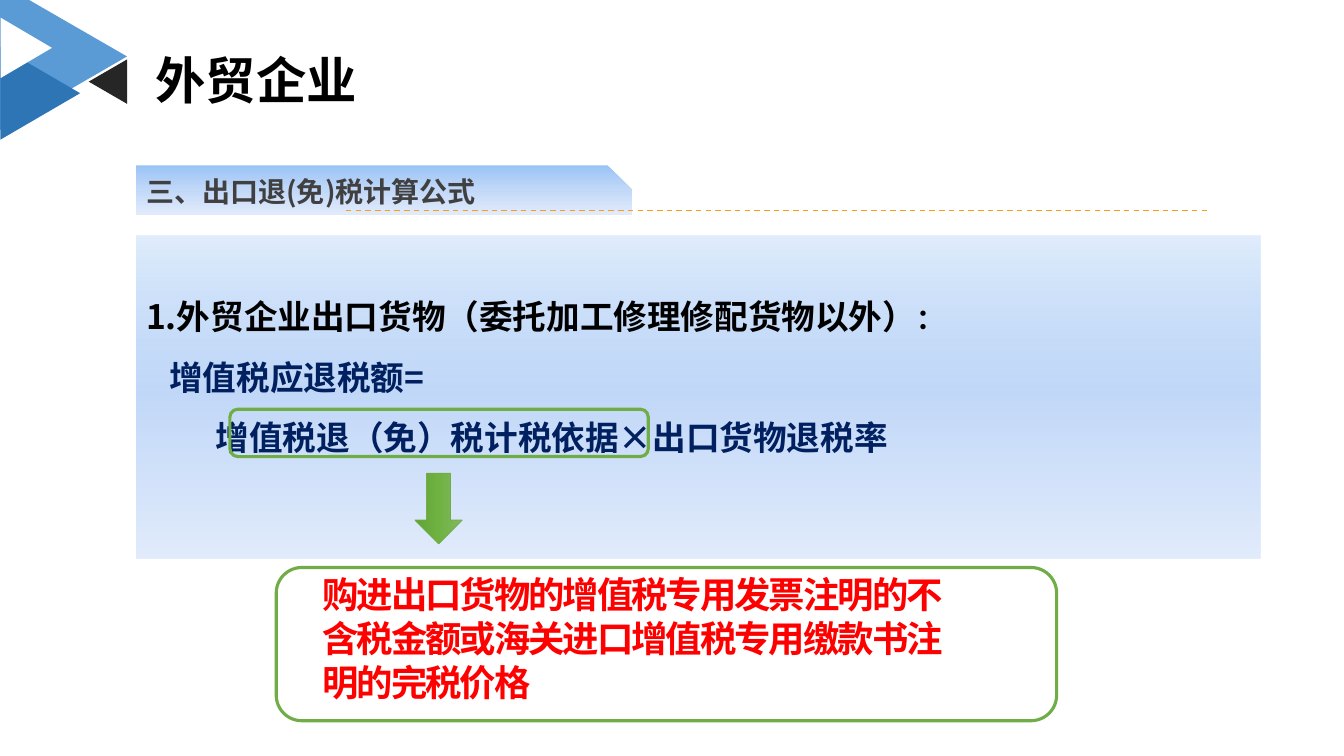
from dataclasses import dataclass

from lxml import etree
from pptx import Presentation
from pptx import util as u
from pptx.dml.color import RGBColor
from pptx.enum import dml, shapes, text
from pptx.oxml import ns

PX = 9144  # 100 px to the inch


@dataclass(frozen=True)
class Theme:
    font: str = "Noto Sans CJK SC"
    black: str = "000000"
    grey: str = "404040"
    navy: str = "002060"
    red: str = "FF0000"
    green: str = "70AD47"
    orange: str = "F89E1B"
    title_size: int = 36
    callout_size: int = 26
    formula_size: int = 24
    heading_size: int = 20
    # (position %, colour, opacity %)
    band: tuple = ((0, "9AC3F5", 100), (50, "C2D8F8", 100), (100, "E1EBFB", 100))
    panel: tuple = ((0, "9AC3F5", 30), (50, "C2D8F8", 100), (100, "E1EBFB", 100))
    leaf: tuple = ((0, "81B861", 100), (50, "6FB242", 100), (100, "62A336", 100))


T = Theme()
SHAPE = shapes.MSO_SHAPE

TITLE = "外贸企业"
HEADING = "三、出口退(免)税计算公式"
CALLOUT = "购进出口货物的增值税专用发票注明的不含税金额或海关进口增值税专用缴款书注明的完税价格"
# (indent, [(words, size, colour), ...])
FORMULA = [
    (0, [("1.外贸企业出口货物（委托加工修理修配货物以外）", T.formula_size, T.black),
         ("：", T.heading_size, T.black)]),
    (23, [("增值税应退税额=", T.formula_size, T.navy)]),
    (69, [("增值税退（免）税计税依据×出口货物退税率", T.formula_size, T.navy)]),
]
CORNER_BAND = ("5B9BD5", [(0, 0), (29, 0), (126, 56), (0, 129)])
# (frame before rotation, rotation, colour)
CORNER_TRIANGLES = [
    ((-6, 53, 92, 79), 90, "2E75B6"),
    ((85, 62, 44, 38), 270, "262626"),
    ((-4, 22, 60, 51), 90, "FFFFFF"),
]
OUTLINES = {"tax basis": (228, 406, 415, 47), "callout": (274, 563, 774, 152)}


def emu(frame):
    return [u.Emu(length * PX) for length in frame]


def rgb(colour):
    return RGBColor.from_string(colour)


def add_run(paragraph, words, size, colour, spacing=None):
    run = paragraph.add_run()
    run.text = words
    run.font.name = T.font
    run.font.size = u.Pt(size)
    run.font.bold = True
    run.font.color.rgb = rgb(colour)
    properties = run.font._element
    properties.find(ns.qn("a:latin")).addnext(
        etree.Element(ns.qn("a:ea"), typeface=T.font))
    if spacing is not None:
        properties.set("spc", str(spacing))


def paint(shape, fill=None, line=None, width=1):
    """Set a plain fill and line; None leaves the part empty."""
    shape.shadow.inherit = False
    if fill:
        shape.fill.solid()
        shape.fill.fore_color.rgb = rgb(fill)
    else:
        shape.fill.background()
    if line:
        shape.line.color.rgb = rgb(line)
        shape.line.width = u.Pt(width)
    else:
        shape.line.fill.background()


def paint_gradient(shape, stops, line=None, width=1):
    """Replace the fill by a gradient running from top to bottom."""
    paint(shape, None, line, width)
    old = shape._element.spPr.find(ns.qn("a:noFill"))
    gradient = etree.Element(ns.qn("a:gradFill"), rotWithShape="1")
    stop_list = etree.SubElement(gradient, ns.qn("a:gsLst"))
    for position, colour, opacity in stops:
        stop = etree.SubElement(stop_list, ns.qn("a:gs"), pos=str(position * 1000))
        tint = etree.SubElement(stop, ns.qn("a:srgbClr"), val=colour)
        if opacity < 100:
            etree.SubElement(tint, ns.qn("a:alpha"), val=str(opacity * 1000))
    etree.SubElement(gradient, ns.qn("a:lin"), ang="5400000", scaled="0")
    old.getparent().replace(old, gradient)


def add_corner(slide):
    colour, points = CORNER_BAND
    builder = slide.shapes.build_freeform(*points[0], scale=PX)
    builder.add_line_segments(points[1:], close=True)
    paint(builder.convert_to_shape(), colour)
    for frame, rotation, colour in CORNER_TRIANGLES:
        triangle = slide.shapes.add_shape(SHAPE.ISOSCELES_TRIANGLE, *emu(frame))
        triangle.rotation = rotation
        paint(triangle, colour)


def add_title(slide):
    title = slide.shapes.title
    title.left, title.top, title.width, title.height = emu((144, 45, 1034, 76))
    title.text_frame.vertical_anchor = text.MSO_ANCHOR.MIDDLE
    paragraph = title.text_frame.paragraphs[0]
    paragraph.alignment = text.PP_ALIGN.LEFT
    paragraph.line_spacing = 0.9
    add_run(paragraph, TITLE, T.title_size, T.black)


def add_panel(slide):
    panel = slide.shapes.add_shape(SHAPE.RECTANGLE, *emu((135, 234, 1115, 320)))
    paint_gradient(panel, T.panel)
    frame = panel.text_frame
    frame.word_wrap = True
    frame.vertical_anchor = text.MSO_ANCHOR.MIDDLE
    frame.margin_bottom = u.Emu(65 * PX)
    for index, (indent, runs) in enumerate(FORMULA):
        paragraph = frame.add_paragraph() if index else frame.paragraphs[0]
        paragraph.alignment = text.PP_ALIGN.LEFT
        paragraph.line_spacing = 1.5
        paragraph._p.get_or_add_pPr().set("marL", str(indent * PX))
        for run in runs:
            add_run(paragraph, *run)


def add_label(slide, frame, words, size, colour, line_spacing=None, spacing=None):
    label = slide.shapes.add_textbox(*emu(frame)).text_frame
    label.word_wrap = True
    paragraph = label.paragraphs[0]
    paragraph.line_spacing = line_spacing
    add_run(paragraph, words, size, colour, spacing)


def add_rule(slide):
    rule = slide.shapes.add_connector(
        shapes.MSO_CONNECTOR.STRAIGHT, *emu((343, 209, 1200, 209)))
    rule.line.color.rgb = rgb(T.orange)
    rule.line.width = u.Pt(1)
    rule.line.dash_style = dml.MSO_LINE.DASH
    etree.SubElement(rule._element.spPr, ns.qn("a:effectLst"))


def main():
    deck = Presentation()
    deck.slide_width, deck.slide_height = emu((1333, 750))
    slide = deck.slides.add_slide(deck.slide_layouts[5])

    add_corner(slide)
    add_title(slide)
    add_panel(slide)

    band = slide.shapes.add_shape(SHAPE.SNIP_1_RECTANGLE, *emu((135, 164, 492, 49)))
    band.adjustments[0] = 0.5
    paint_gradient(band, T.band)

    for frame in OUTLINES.values():
        outline = slide.shapes.add_shape(SHAPE.ROUNDED_RECTANGLE, *emu(frame))
        paint(outline, line=T.green, width=2.25)

    arrow = slide.shapes.add_shape(SHAPE.RIGHT_ARROW, *emu((400, 481, 70, 47)))
    arrow.rotation = 90
    paint_gradient(arrow, T.leaf, T.green, 0.5)

    add_label(slide, (310, 563, 667, 141), CALLOUT, T.callout_size, T.red, spacing=-150)
    add_label(slide, (135, 172, 479, 39), HEADING, T.heading_size, T.grey, line_spacing=0.9)
    add_rule(slide)
    deck.save("out.pptx")


if __name__ == "__main__":
    main()
